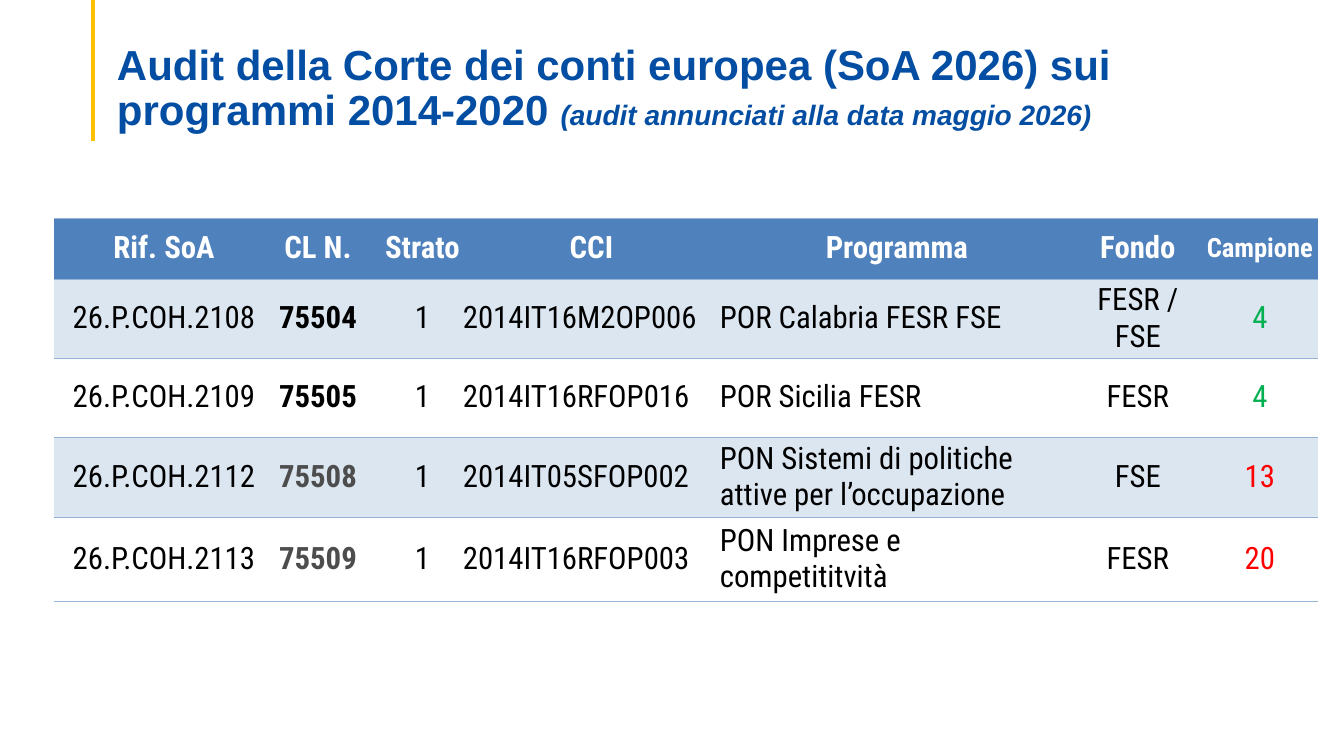
import pptx
import pptx.dml.color
import pptx.enum.shapes
import pptx.enum.text
import pptx.oxml
import pptx.oxml.ns
import pptx.util

SCALE = 914400 / 100.8  # EMU in one px
SLIDE_SIZE = (1344, 756)
RULE_X, RULE_BOTTOM = 93, 141
TITLE_BOX = (107, 48, 1159, 87)
TABLE_LEFT, TABLE_TOP = 54, 218
COLUMN_WIDTHS = (220, 88, 20, 81, 257, 354, 128, 116)
ROW_HEIGHTS = (61, 79, 79, 80, 84)

NAVY, GOLD, WHITE, BLACK = "034EA2", "FFC000", "FFFFFF", "000000"
HEADER_BLUE, BAND_BLUE, BORDER_BLUE = "4F81BD", "DCE6F1", "95B3D7"
GREY, GREEN, RED = "4D4D4D", "00B050", "FF0000"

TITLE = "Audit della Corte dei conti europea (SoA 2026) sui programmi 2014-2020 "
TITLE_NOTE = "(audit annunciati alla data maggio 2026)"
HEADERS = ("Rif. SoA", "CL N.", "", "Strato", "CCI", "Programma", "Fondo", "Campione")
AUDITS = [
    ("26.P.COH.2108", "75504", "", "1", "2014IT16M2OP006", "POR Calabria FESR FSE", "FESR / FSE", "4"),
    ("26.P.COH.2109", "75505", "", "1", "2014IT16RFOP016", "POR Sicilia FESR", "FESR", "4"),
    ("26.P.COH.2112", "75508", "", "1", "2014IT05SFOP002",
     "PON Sistemi di politiche attive per l’occupazione", "FSE", "13"),
    ("26.P.COH.2113", "75509", "", "1", "2014IT16RFOP003", "PON Imprese e competititvità", "FESR", "20"),
]
NUMBER_COLUMN, CCI_COLUMN, PROGRAMME_COLUMN, SAMPLE_COLUMN = 1, 4, 5, 7
NUMBER_COLORS = (BLACK, BLACK, GREY, GREY)
SAMPLE_COLORS = (GREEN, GREEN, RED, RED)


def px(length):
    return pptx.util.Emu(round(length * SCALE))


def color(value):
    return pptx.dml.color.RGBColor.from_string(value)


def set_font(font, name, size, value, bold):
    font.name = name
    font.size = pptx.util.Pt(size)
    font.bold = bold
    font.color.rgb = color(value)


def add_rule(slide):
    rule = slide.shapes.add_connector(
        pptx.enum.shapes.MSO_CONNECTOR.STRAIGHT, px(RULE_X), px(0), px(RULE_X), px(RULE_BOTTOM))
    rule.line.color.rgb = color(GOLD)
    rule.line.width = pptx.util.Pt(2.25)
    rule._element.spPr.append(pptx.oxml.parse_xml(f"<a:effectLst {pptx.oxml.ns.nsdecls('a')}/>"))


def format_title(slide):
    title = slide.shapes.title
    title.left, title.top, title.width, title.height = map(px, TITLE_BOX)
    frame = title.text_frame
    frame.word_wrap = True
    frame.auto_size = pptx.enum.text.MSO_AUTO_SIZE.NONE
    frame.vertical_anchor = pptx.enum.text.MSO_ANCHOR.BOTTOM
    frame.margin_left = frame.margin_right = px(10)
    frame.margin_top, frame.margin_bottom = px(5), 0
    paragraph = frame.paragraphs[0]
    paragraph.alignment = pptx.enum.text.PP_ALIGN.LEFT
    paragraph.line_spacing = 0.9
    for text, size, italic in ((TITLE, 30, False), (TITLE_NOTE, 20, True)):
        run = paragraph.add_run()
        run.text = text
        set_font(run.font, "Arial", size, NAVY, True)
        run.font.italic = italic


def set_borders(cell):
    """Draw thin lines above and below the cell and none at its sides."""
    namespace = pptx.oxml.ns.nsdecls("a")
    line = f'<a:solidFill><a:srgbClr val="{BORDER_BLUE}"/></a:solidFill>'
    properties = cell._tc.get_or_add_tcPr()
    for side, content in (("L", "<a:noFill/>"), ("R", "<a:noFill/>"), ("T", line), ("B", line)):
        properties.append(pptx.oxml.parse_xml(f'<a:ln{side} {namespace} w="6350">{content}</a:ln{side}>'))


def format_cell(cell, row, column, text):
    is_header = row == 0
    cell.margin_left = cell.margin_right = cell.margin_top = cell.margin_bottom = 0
    cell.vertical_anchor = pptx.enum.text.MSO_ANCHOR.MIDDLE
    set_borders(cell)
    if row % 2 or is_header:
        cell.fill.solid()
        cell.fill.fore_color.rgb = color(HEADER_BLUE if is_header else BAND_BLUE)
    else:
        cell.fill.background()
    if not text:
        return

    cell.text = text
    text_color, size = BLACK, 22
    if is_header:
        text_color = WHITE
        size = 19 if column == SAMPLE_COLUMN else 22
    elif column == NUMBER_COLUMN:
        text_color = NUMBER_COLORS[row - 1]
    elif column == SAMPLE_COLUMN:
        text_color = SAMPLE_COLORS[row - 1]
    paragraph = cell.text_frame.paragraphs[0]
    at_left = not is_header and column in (CCI_COLUMN, PROGRAMME_COLUMN)
    alignments = pptx.enum.text.PP_ALIGN
    paragraph.alignment = alignments.LEFT if at_left else alignments.CENTER
    set_font(paragraph.font, "Roboto Condensed", size, text_color, is_header or column == NUMBER_COLUMN)


def add_audit_table(slide):
    rows = [HEADERS, *AUDITS]
    table = slide.shapes.add_table(
        len(rows), len(HEADERS), px(TABLE_LEFT), px(TABLE_TOP),
        px(sum(COLUMN_WIDTHS)), px(sum(ROW_HEIGHTS))).table
    table.horz_banding = False
    for column, width in zip(table.columns, COLUMN_WIDTHS):
        column.width = px(width)
    for row, height in zip(table.rows, ROW_HEIGHTS):
        row.height = px(height)
    for row, texts in enumerate(rows):
        for column, text in enumerate(texts):
            format_cell(table.cell(row, column), row, column, text)


def main():
    presentation = pptx.Presentation()
    presentation.slide_width, presentation.slide_height = map(px, SLIDE_SIZE)
    slide = presentation.slides.add_slide(presentation.slide_layouts.get_by_name("Title Only"))
    add_rule(slide)
    format_title(slide)
    add_audit_table(slide)
    presentation.save("out.pptx")


if __name__ == "__main__":
    main()
